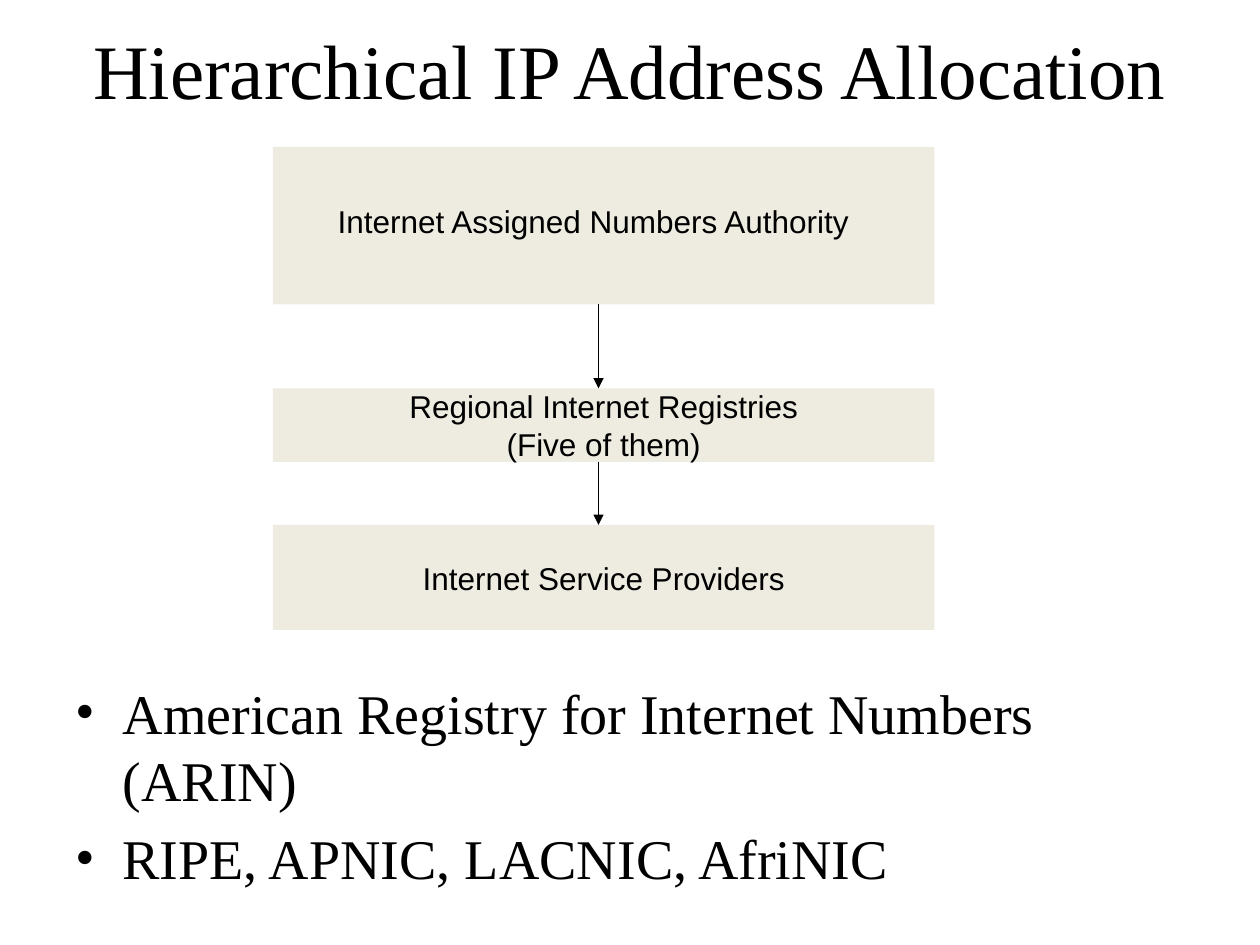
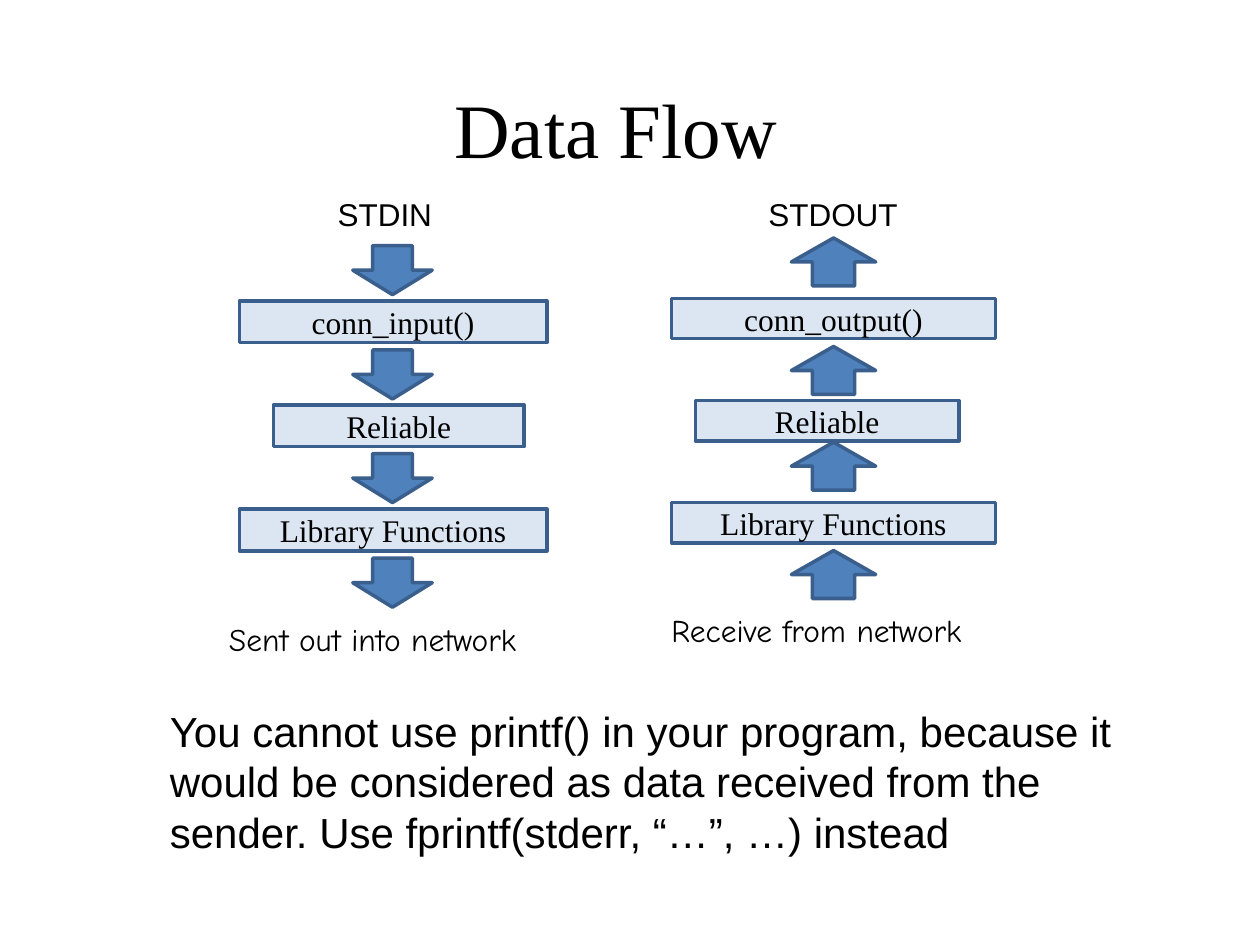
from pptx import Presentation
from pptx.dml.color import RGBColor
from pptx.enum.shapes import MSO_CONNECTOR as LINE, MSO_SHAPE as SHAPE
from pptx.enum.text import MSO_ANCHOR as ANCHOR, PP_ALIGN as ALIGN
from pptx.oxml.ns import qn
from pptx.util import Pt
from lxml.etree import SubElement as sub

# Shared style
BLACK, BEIGE = "000000", "EEECE1"
PALE, BLUE, EDGE = "DCE6F2", "4F81BD", "3A5F8C"
SERIF, SANS, HAND = "Times New Roman", "Arial", "Comic Neue"


def color(hue):
    return RGBColor.from_string(hue)


def put(shapes, area, text="", font=SANS, size=18, kind=None, fill=None,
        edge=None, mid=True, wrap=True):
    """Place a text box, or a preset shape when kind is given."""
    spot = [Pt(v) for v in area]
    if kind is None:
        item = shapes.add_textbox(*spot)
    else:
        item = shapes.add_shape(kind, *spot)
        item.shadow.inherit = False
        item.fill.solid()
        item.fill.fore_color.rgb = color(fill)
        if edge:
            item.line.color.rgb = color(edge)
            item.line.width = Pt(2)
        else:
            item.line.fill.background()
    if text:
        frame = item.text_frame
        frame.text = text
        frame.word_wrap = wrap
        frame.vertical_anchor = ANCHOR.MIDDLE if mid else ANCHOR.TOP
        if kind is not None:
            frame.margin_top = frame.margin_bottom = 0
        for para in frame.paragraphs:
            para.alignment = ALIGN.CENTER if mid else ALIGN.LEFT
            for run in para.runs:
                run.font.name = font
                run.font.size = Pt(size)
                run.font.color.rgb = color(BLACK)
    return item


deck = Presentation()
deck.slide_width, deck.slide_height = Pt(720), Pt(540)
blank = deck.slide_layouts[6]

# Slides with their titles
pages = []
for title, left, top in [("Hierarchical IP Address Allocation", 36, -6),
                         ("Data Flow", 28, 28)]:
    page = deck.slides.add_slide(blank).shapes
    put(page, (left, top, 648, 90), title, SERIF, 44)
    pages.append(page)
tree, flow = pages

# Slide 1: levels of the hierarchy
levels = [
    (84, 90, ""),
    (222, 42, "Regional Internet Registries\n(Five of them)"),
    (300, 60, "Internet Service Providers"),
]
for top, high, text in levels:
    put(tree, (156, top, 378, high), text, kind=SHAPE.RECTANGLE,
        fill=BEIGE, wrap=False)
put(tree, (162, 90, 354, 72), "Internet Assigned Numbers Authority",
    wrap=False)

# Arrows from each level to the next
for (top, high, _), (end, _, _) in zip(levels, levels[1:]):
    link = tree.add_connector(LINE.STRAIGHT, Pt(342), Pt(top + high),
                              Pt(342), Pt(end))
    link.line.color.rgb = color(BLACK)
    link.line.width = Pt(0.75)
    sub(link.line._get_or_add_ln(), qn("a:tailEnd"), type="triangle")
    sub(link._element.spPr, qn("a:effectLst"))

# Registry bullets
names = "American Registry for Internet Numbers (ARIN)\nRIPE, APNIC, LACNIC, AfriNIC"
body = put(tree, (36, 384, 648, 138), names, SERIF, 32, mid=False)
for para in body.text_frame.paragraphs:
    para.space_before = Pt(6.4)
    props = para._p.get_or_add_pPr()
    props.set("marL", str(Pt(27)))
    props.set("indent", str(Pt(-27)))
    sub(props, qn("a:buFont"), typeface=SERIF)
    sub(props, qn("a:buChar"), char="•")

# Slide 2: one group per direction of data
# Boxes are (left, width); labels are (text, font, area)
sides = [
    dict(turn=0, arrow=(201.6, 45.4, 28), tips=(140.4, 200, 259.2, 319),
         top=172, step=59.5, high=23.8, wide=(136.8, 175.7),
         slim=(156.2, 143.3), call="conn_input()",
         notes=[("STDIN", SANS, (185.8, 108, 71.3, 21)),
                ("Sent out into network", HAND, (123.8, 350.6, 208, 29))]),
    dict(turn=180, arrow=(452.2, 48.2, 27.4), tips=(136, 198, 252.7, 314.6),
         top=170.6, step=58.3, high=23, wide=(383.8, 185),
         slim=(397.4, 150.5), call="conn_output()",
         notes=[("STDOUT", SANS, (432, 108, 95.8, 20)),
                ("Receive from network", HAND, (376.6, 345.6, 219.6, 29))]),
]
for side in sides:
    group = flow.add_group_shape().shapes
    left, width, high = side["arrow"]
    for top in side["tips"]:
        arrow = put(group, (left, top, width, high), kind=SHAPE.DOWN_ARROW,
                    fill=BLUE, edge=EDGE)
        arrow.rotation = side["turn"]
    layers = [(side["call"], "wide"), ("Reliable", "slim"),
              ("Library Functions", "wide")]
    for i, (text, size) in enumerate(layers):
        left, width = side[size]
        put(group, (left, side["top"] + i * side["step"], width, side["high"]),
            text, SERIF, kind=SHAPE.RECTANGLE, fill=PALE, edge=EDGE)
    for text, font, area in side["notes"]:
        put(group, area, text, font, mid=False)

# Advice below the diagram
put(flow, (90, 399.6, 556.6, 94.3),
    "You cannot use printf() in your program, because it would be considered "
    "as data received from the sender. Use fprintf(stderr, “…”, …) instead",
    size=24, mid=False)

deck.save("out.pptx")
